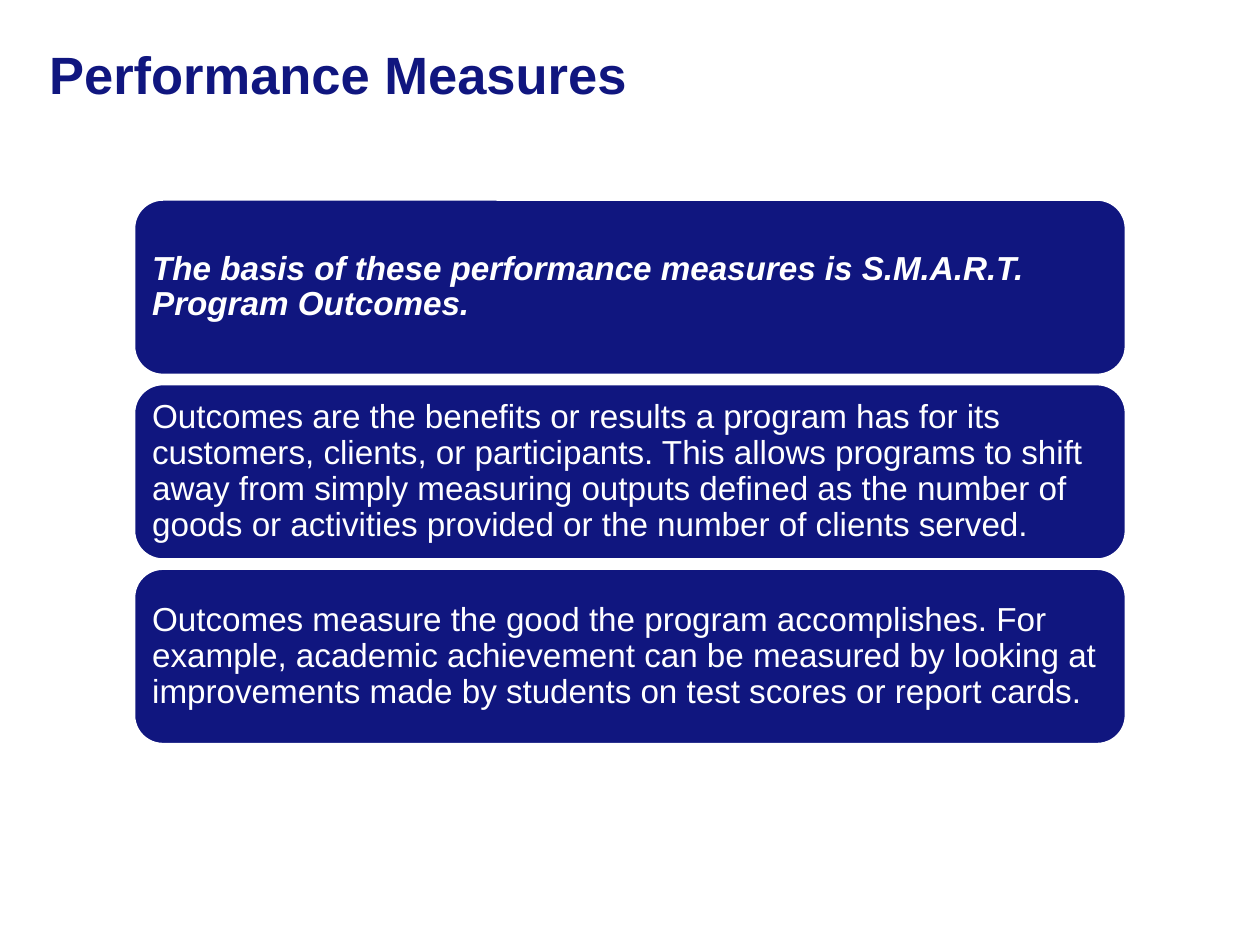
from pptx import Presentation
from pptx import util as u
from pptx.dml.color import RGBColor
from pptx.enum import shapes, text

COLOURS = {"navy": "10167F", "white": "FFFFFF"}
PANEL_LEFT, PANEL_TOP = 1.06, 1.58
PANEL_WIDTH, PANEL_HEIGHT = 7.88, 1.4
PANEL_STEP = 1.465

PANELS = [
    ("The basis of these performance measures is S.M.A.R.T. Program Outcomes.",
     {"bold": True, "italic": True}),
    ("Outcomes are the benefits or results a program has for its customers, "
     "clients, or participants. This allows programs to shift away from simply "
     "measuring outputs defined as the number of goods or activities provided "
     "or the number of clients served.", {}),
    ("Outcomes measure the good the program accomplishes. For example, academic "
     "achievement can be measured by looking at improvements made by students "
     "on test scores or report cards.", {}),
]


def colour(name):
    return RGBColor.from_string(COLOURS[name])


def set_frame(frame, anchor, margins):
    """Margins are left, top, right, bottom in inches."""
    frame.word_wrap = True
    frame.auto_size = text.MSO_AUTO_SIZE.NONE
    frame.vertical_anchor = anchor
    for side, margin in zip(("left", "top", "right", "bottom"), margins):
        setattr(frame, f"margin_{side}", u.Inches(margin))


def write(frame, words, size, colour_name, **styles):
    para = frame.paragraphs[0]
    para.alignment = text.PP_ALIGN.LEFT
    span = para.add_run()
    span.text = words
    formats = {"name": "Arial", "size": u.Pt(size), **styles}
    for name, value in formats.items():
        setattr(span.font, name, value)
    span.font.color.rgb = colour(colour_name)
    return para


def add_title(page, words):
    title = page.shapes.title
    place = {"left": 0.32, "top": 0.23, "width": 7.92, "height": 1.25}
    for name, value in place.items():
        setattr(title, name, u.Inches(value))
    set_frame(title.text_frame, text.MSO_ANCHOR.TOP, (0.07, 0.1, 0.07, 0.05))
    write(title.text_frame, words, 30, "navy", bold=True)


def add_panel(page, top, words, styles):
    box = page.shapes.add_shape(
        shapes.MSO_SHAPE.ROUNDED_RECTANGLE, u.Inches(PANEL_LEFT), u.Inches(top),
        u.Inches(PANEL_WIDTH), u.Inches(PANEL_HEIGHT))
    box.shadow.inherit = False
    box.fill.solid()
    box.fill.fore_color.rgb = colour("navy")
    box.line.color.rgb = colour("white")
    box.line.width = u.Pt(2)
    set_frame(box.text_frame, text.MSO_ANCHOR.MIDDLE, (0.08,) * 4)
    para = write(box.text_frame, words, 19, "white", **styles)
    para.line_spacing = 0.9


def main():
    deck = Presentation()
    deck.slide_width, deck.slide_height = u.Inches(10), u.Inches(7.5)
    page = deck.slides.add_slide(deck.slide_layouts[5])
    add_title(page, "Performance Measures")
    for row, (words, styles) in enumerate(PANELS):
        add_panel(page, PANEL_TOP + row * PANEL_STEP, words, styles)
    deck.save("out.pptx")


if __name__ == "__main__":
    main()
